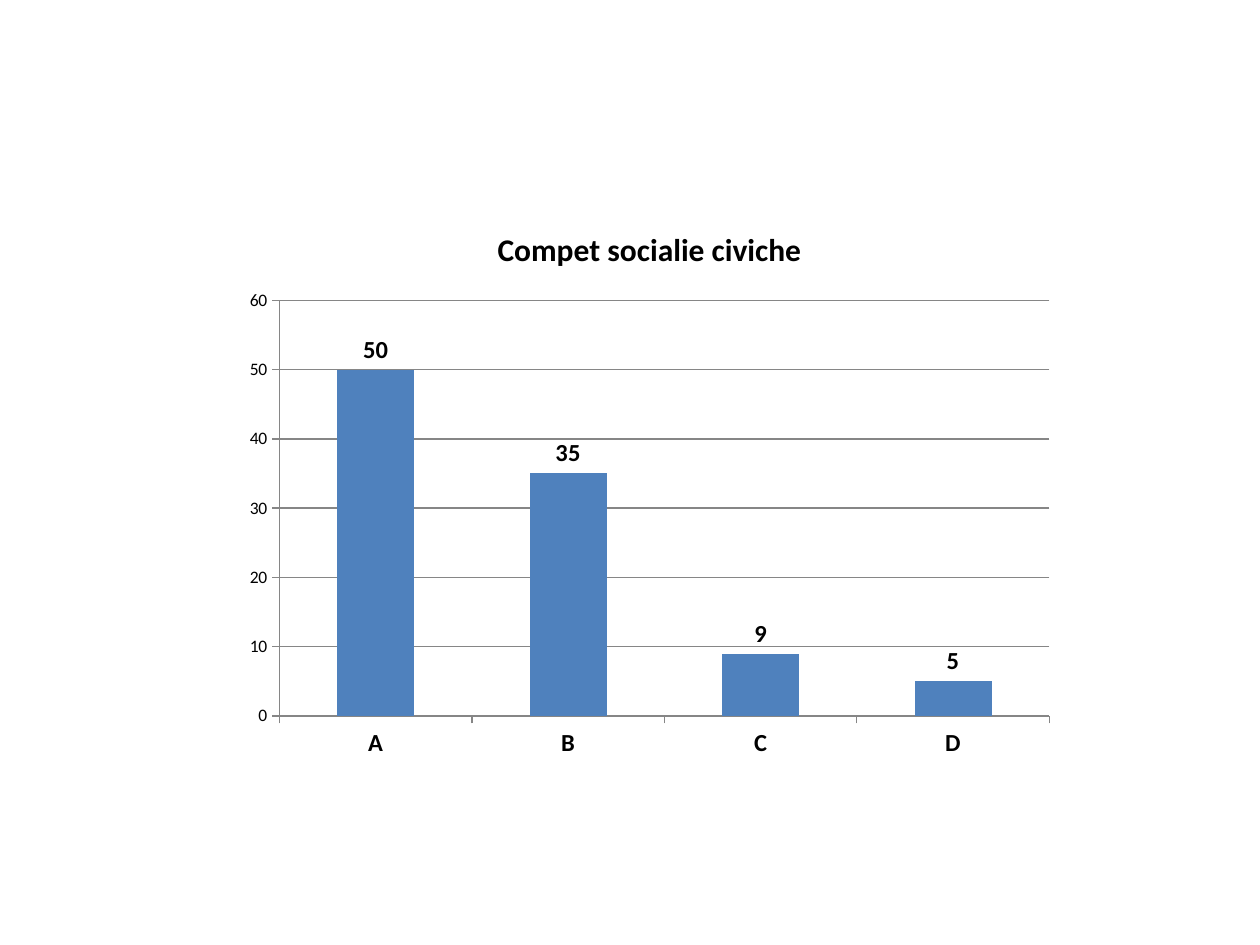
from pptx import Presentation
from pptx.chart.data import CategoryChartData
from pptx.dml.color import RGBColor
from pptx.enum.chart import XL_CHART_TYPE, XL_LABEL_POSITION, XL_TICK_MARK
from pptx.util import Inches, Pt


def rgb(value):
    return RGBColor.from_string(value)


class SlideBuilder:
    FONT = "Calibri"
    TEXT = "000000"
    BAR = "4F81BD"
    LINE = "868686"

    def __init__(self, slide):
        self.s = slide

    def style_font(self, font, size, bold=False):
        font.name = self.FONT
        font.size = Pt(size)
        font.bold = bold
        font.color.rgb = rgb(self.TEXT)

    def style_line(self, line):
        line.color.rgb = rgb(self.LINE)
        line.width = Pt(0.75)

    def style_axis(self, axis, size, bold=False):
        axis.major_tick_mark = XL_TICK_MARK.OUTSIDE
        axis.minor_tick_mark = XL_TICK_MARK.NONE
        self.style_line(axis.format.line)
        self.style_font(axis.tick_labels.font, size, bold)

    def column_chart(self, title, values, left, top, width, height):
        data = CategoryChartData()
        data.categories = list(values)
        data.add_series(title, list(values.values()))
        chart = self.s.shapes.add_chart(
            XL_CHART_TYPE.COLUMN_CLUSTERED, Inches(left), Inches(top),
            Inches(width), Inches(height), data).chart
        self.style_font(chart.font, 10)
        chart.has_legend = False

        # Title
        chart.has_title = True
        tf = chart.chart_title.text_frame
        tf.text = title
        self.style_font(tf.paragraphs[0].font, 18, bold=True)
        chart.chart_title.include_in_layout = False

        # Axes
        self.style_axis(chart.category_axis, 14, bold=True)
        self.style_axis(chart.value_axis, 10)
        chart.value_axis.minimum_scale = 0
        chart.value_axis.maximum_scale = 60
        chart.value_axis.major_unit = 10
        chart.value_axis.has_major_gridlines = True
        self.style_line(chart.value_axis.major_gridlines.format.line)

        # Columns and their labels
        plot = chart.plots[0]
        plot.gap_width = 150
        plot.vary_by_categories = False
        fill = plot.series[0].format.fill
        fill.solid()
        fill.fore_color.rgb = rgb(self.BAR)
        labels = plot.series[0].data_labels
        labels.show_value = True
        labels.position = XL_LABEL_POSITION.OUTSIDE_END
        self.style_font(labels.font, 14, bold=True)


def main():
    prs = Presentation()
    prs.slide_width, prs.slide_height = Inches(10), Inches(7.5)
    builder = SlideBuilder(prs.slides.add_slide(prs.slide_layouts[6]))

    # Column chart
    builder.column_chart("Compet socialie civiche",
                         {"A": 50, "B": 35, "C": 9, "D": 5},
                         1.85, 1.62, 6.61, 4.49)
    prs.save("out.pptx")


if __name__ == "__main__":
    main()
